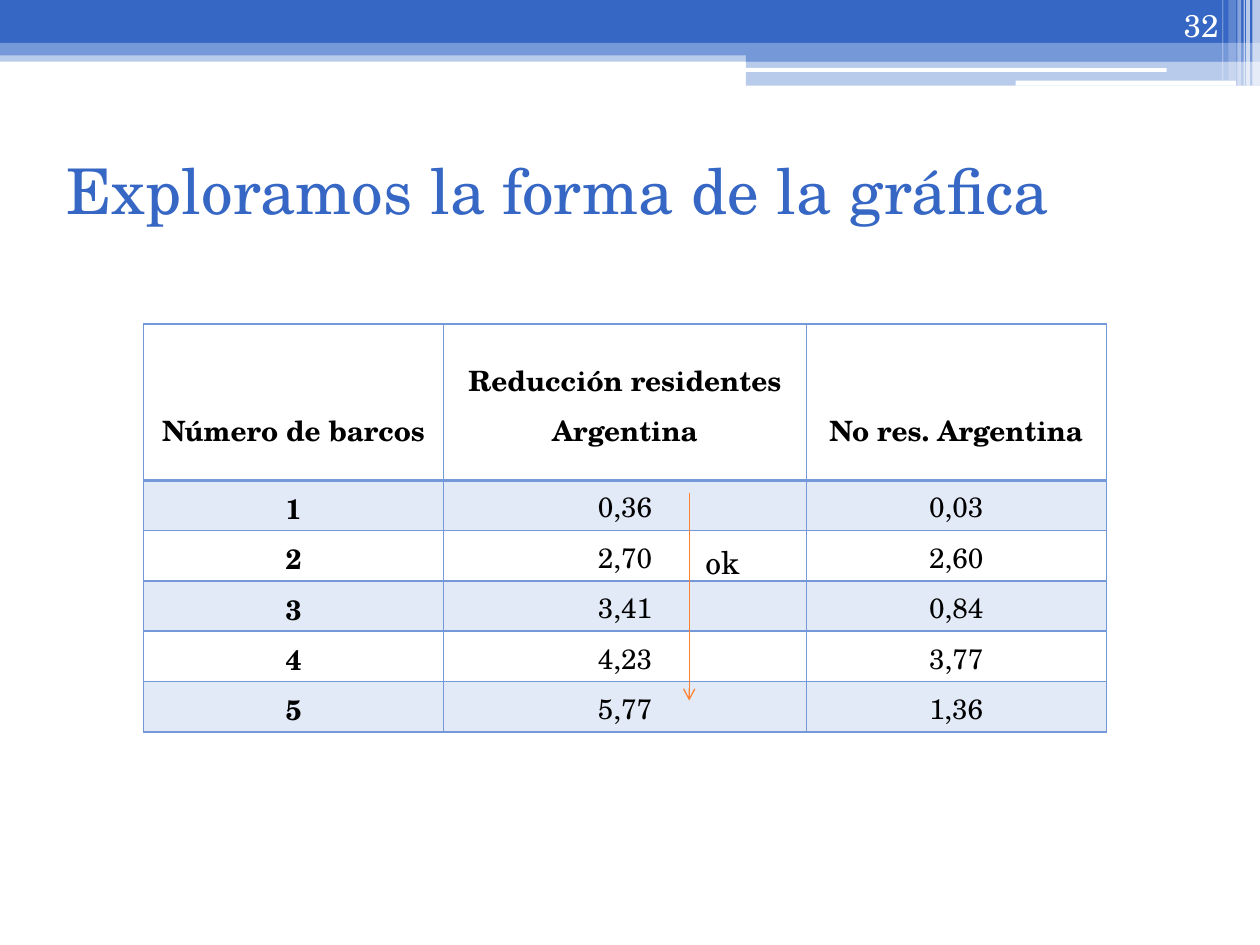
from lxml import etree
from pptx import Presentation
from pptx.dml.color import RGBColor
from pptx.enum.shapes import MSO_CONNECTOR, MSO_SHAPE
from pptx.enum.text import MSO_ANCHOR, PP_ALIGN
from pptx.oxml.ns import qn
from pptx.util import Inches, Pt

FONT = "TeX Gyre Schola"
BLUE, LIGHT_BLUE, BAND = "3667C4", "7598D9", "E3EAF7"
WHITE, BLACK, ORANGE = "FFFFFF", "000000", "FD8231"
RECTANGLE, ROUNDED = MSO_SHAPE.RECTANGLE, MSO_SHAPE.ROUNDED_RECTANGLE
STRAIGHT = MSO_CONNECTOR.STRAIGHT
LEFT, CENTER, RIGHT = PP_ALIGN.LEFT, PP_ALIGN.CENTER, PP_ALIGN.RIGHT
TOP, MIDDLE, BOTTOM = MSO_ANCHOR.TOP, MSO_ANCHOR.MIDDLE, MSO_ANCHOR.BOTTOM


def style_text(paragraph, text, size, colour, align, bold=False):
    paragraph.text = text
    paragraph.alignment = align
    paragraph.font.name = FONT
    paragraph.font.size = Pt(size)
    paragraph.font.bold = bold
    paragraph.font.color.rgb = RGBColor.from_string(colour)


presentation = Presentation()
presentation.slide_width, presentation.slide_height = Inches(10), Inches(7.5)
slide = presentation.slides.add_slide(presentation.slide_layouts[6])

# Header bands and stripes: left, top, width, height, colour, opacity in percent
bands = [
    (RECTANGLE, 0, 0.4, 10, 0.09, LIGHT_BLUE, 50),
    (RECTANGLE, 0, 0, 10, 0.34, BLUE, 100),
    (RECTANGLE, 0, 0.34, 10, 0.1, LIGHT_BLUE, 100),
    (RECTANGLE, 5.92, 0.39, 4.08, 0.1, LIGHT_BLUE, 100),
    (RECTANGLE, 5.92, 0.48, 4.08, 0.2, LIGHT_BLUE, 50),
    (ROUNDED, 5.91, 0.54, 3.35, 0.03, WHITE, 100),
    (ROUNDED, 8.06, 0.64, 1.75, 0.04, WHITE, 100),
    (RECTANGLE, 9.94, 0, 0.06, 0.68, WHITE, 65),
    (RECTANGLE, 9.89, 0, 0.03, 0.68, WHITE, 65),
    (RECTANGLE, 9.87, 0, 0.01, 0.68, WHITE, 60),
    (RECTANGLE, 9.82, 0, 0.03, 0.68, WHITE, 40),
    (RECTANGLE, 9.75, 0, 0.06, 0.64, WHITE, 20),
    (RECTANGLE, 9.7, 0, 0.01, 0.64, WHITE, 30),
]
for kind, left, top, width, height, colour, opacity in bands:
    shape = slide.shapes.add_shape(kind, Inches(left), Inches(top), Inches(width), Inches(height))
    shape.shadow.inherit = False
    shape.line.fill.background()
    shape.fill.solid()
    shape.fill.fore_color.rgb = RGBColor.from_string(colour)
    if opacity < 100:
        colour_element = shape._element.spPr.find(".//" + qn("a:srgbClr"))
        etree.SubElement(colour_element, qn("a:alpha"), val=str(opacity * 1000))

# Table
rows = [
    ("Número de barcos", "Reducción residentes Argentina", "No res. Argentina"),
    ("1", "0,36", "0,03"),
    ("2", "2,70", "2,60"),
    ("3", "3,41", "0,84"),
    ("4", "4,23", "3,77"),
    ("5", "5,77", "1,36"),
]
table = slide.shapes.add_table(
    len(rows), 3, Inches(1.14), Inches(2.57), Inches(7.64), Inches(3.23)
).table
for column, width in zip(table.columns, (2.38, 2.88, 2.38)):
    column.width = Inches(width)
for row_index, texts in enumerate(rows):
    is_header = row_index == 0
    table.rows[row_index].height = Inches(1.24 if is_header else 0.4)
    for column_index, text in enumerate(texts):
        cell = table.cell(row_index, column_index)
        cell.margin_left = cell.margin_right = Inches(0.07)
        cell.margin_top = cell.margin_bottom = 0
        cell.vertical_anchor = MIDDLE if is_header else TOP
        # One-line headings sit level with the second line of the middle one
        if is_header and column_index != 1:
            cell.margin_top = Inches(0.4)
        paragraph = cell.text_frame.paragraphs[0]
        style_text(paragraph, text, 16, BLACK, CENTER, is_header or column_index == 0)
        paragraph.line_spacing = 1.15

        # Borders, heavier around the header's lower edge
        properties = cell._tc.get_or_add_tcPr()
        for side in "LRTB":
            heavy = (is_header and side == "B") or (row_index == 1 and side == "T")
            border = etree.SubElement(
                properties, qn("a:ln" + side), w=str(Pt(2 if heavy else 1))
            )
            border_fill = etree.SubElement(border, qn("a:solidFill"))
            etree.SubElement(border_fill, qn("a:srgbClr"), val=LIGHT_BLUE)
        if row_index % 2:
            cell.fill.solid()
            cell.fill.fore_color.rgb = RGBColor.from_string(BAND)
        else:
            cell.fill.background()

# Downward arrow beside the middle column's values
arrow = slide.shapes.add_connector(
    STRAIGHT, Inches(5.47), Inches(3.91), Inches(5.47), Inches(5.56)
)
arrow.line.color.rgb = RGBColor.from_string(ORANGE)
arrow.line.width = Pt(0.75)
etree.SubElement(arrow.line._get_or_add_ln(), qn("a:tailEnd"), type="arrow")
etree.SubElement(arrow._element.spPr, qn("a:effectLst"))

# Title, arrow label and slide number
labels = [
    ("Exploramos la forma de la gráfica", 0.43, 0.92, 9, 1.17, 36, BLUE, LEFT, MIDDLE, True),
    ("ok", 5.5, 4.26, 0.47, 0.4, 18, BLACK, LEFT, TOP, False),
    ("32", 8.94, 0, 0.83, 0.4, 18, WHITE, RIGHT, BOTTOM, True),
]
for text, left, top, width, height, size, colour, align, anchor, wrap in labels:
    box = slide.shapes.add_textbox(Inches(left), Inches(top), Inches(width), Inches(height))
    box.text_frame.word_wrap = wrap
    box.text_frame.vertical_anchor = anchor
    style_text(box.text_frame.paragraphs[0], text, size, colour, align)

presentation.save("out.pptx")
